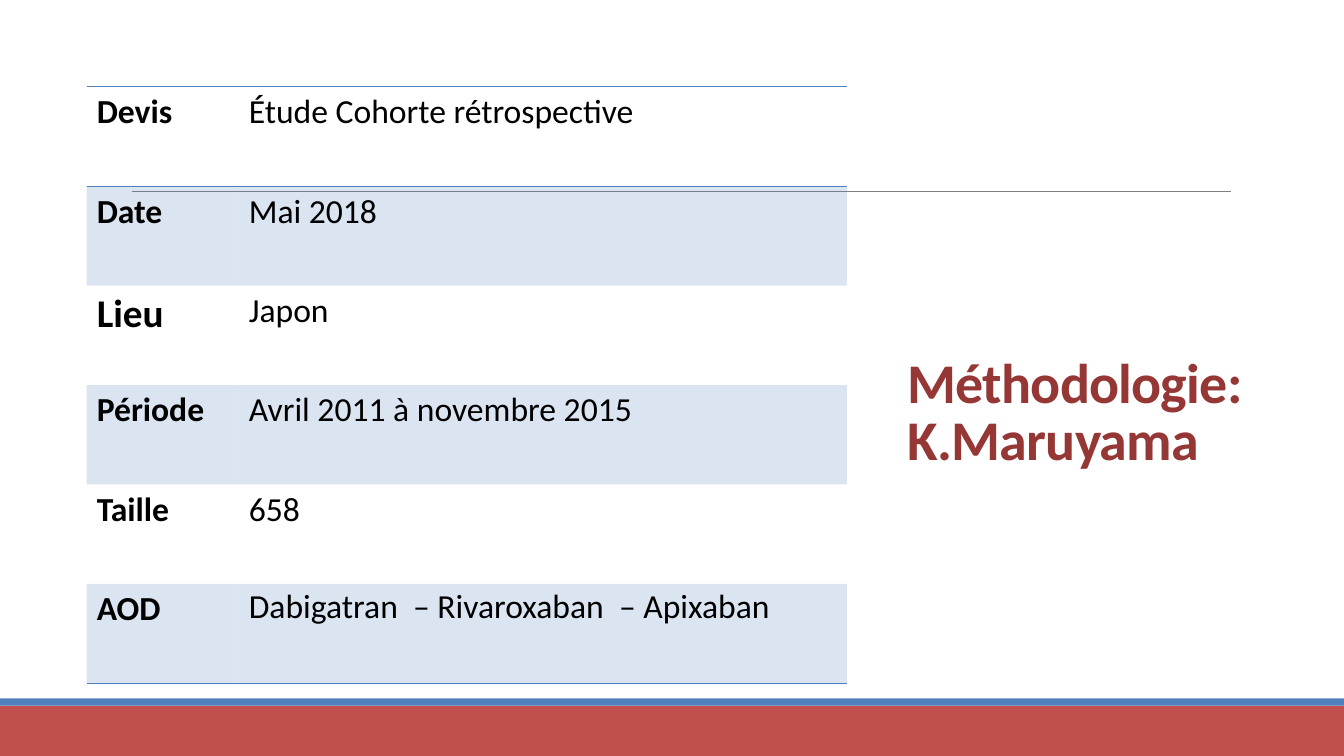
from dataclasses import dataclass

from lxml.etree import SubElement
from pptx import Presentation
from pptx.dml.color import RGBColor
from pptx.enum.shapes import MSO_CONNECTOR, MSO_SHAPE
from pptx.enum.text import MSO_ANCHOR, MSO_AUTO_SIZE, PP_ALIGN
from pptx.oxml import parse_xml
from pptx.oxml.ns import nsdecls, qn
from pptx.util import Inches, Pt


@dataclass(frozen=True)
class Theme:
    """Colours, font and type sizes of the slide."""
    blue: str = "4F81BD"
    red: str = "C0504D"
    title: str = "953735"
    rule: str = "808080"
    text: str = "000000"
    font: str = "Calibri"
    title_size: int = 40
    body_size: int = 24
    large_size: int = 28
    band_alpha: int = 20


THEME = Theme()
NO_TABLE_STYLE = "{2D5ABB26-0587-4C30-8999-92F81FD0307C}"
STUDY_ROWS = [
    ("Devis", "Étude Cohorte rétrospective"),
    ("Date", "Mai 2018"),
    ("Lieu", "Japon"),
    ("Période", "Avril 2011 à novembre 2015"),
    ("Taille", "658"),
    ("AOD", "Dabigatran  – Rivaroxaban  – Apixaban"),
]


def style_run(run, size, color, bold):
    """Apply the theme font with a size, colour and weight."""
    run.font.name = THEME.font
    run.font.size = Pt(size)
    run.font.bold = bold
    run.font.color.rgb = RGBColor.from_string(color)


def add_bar(slide, left, top, width, height, color):
    """Add a plain filled bar."""
    bar = slide.shapes.add_shape(
        MSO_SHAPE.RECTANGLE, Inches(left), Inches(top), Inches(width), Inches(height))
    bar.shadow.inherit = False
    bar.fill.solid()
    bar.fill.fore_color.rgb = RGBColor.from_string(color)
    bar.line.fill.background()


def add_footer(slide, left, top, width, height):
    """Add the red footer with its blue strip on top."""
    strip = 0.07
    add_bar(slide, left, top + strip, width, height - strip, THEME.red)
    add_bar(slide, left, top, width, strip, THEME.blue)


def add_rule(slide, left, top, width):
    """Add the thin grey horizontal line."""
    rule = slide.shapes.add_connector(
        MSO_CONNECTOR.STRAIGHT, Inches(left), Inches(top), Inches(left + width), Inches(top))
    rule.line.color.rgb = RGBColor.from_string(THEME.rule)
    rule.line.width = Pt(0.5)
    SubElement(rule._element.spPr, qn("a:effectLst"))


def place_title(slide, left, top, width, height, lines):
    """Place the title placeholder and fill it with lines."""
    title = slide.shapes.title
    title.left, title.top = Inches(left), Inches(top)
    title.width, title.height = Inches(width), Inches(height)
    frame = title.text_frame
    frame.word_wrap = True
    frame.auto_size = MSO_AUTO_SIZE.NONE
    frame.vertical_anchor = MSO_ANCHOR.BOTTOM
    paragraph = frame.paragraphs[0]
    paragraph.text = lines[0]
    for line in lines[1:]:
        paragraph.add_line_break()
        paragraph.add_run().text = line
    paragraph.alignment = PP_ALIGN.LEFT
    paragraph.line_spacing = 0.85
    for run in paragraph.runs:
        style_run(run, THEME.title_size, THEME.title, True)
        run.font._element.set("spc", "-50")


def set_borders(cell, sides):
    """Draw blue borders on the given sides, listed in T, B order."""
    properties = cell._tc.get_or_add_tcPr()
    for position, side in enumerate(sides):
        properties.insert(position, parse_xml(
            f'<a:ln{side} {nsdecls("a")} w="12700"><a:solidFill>'
            f'<a:srgbClr val="{THEME.blue}"/></a:solidFill></a:ln{side}>'))


def fill_band(cell, banded):
    """Give a banded cell the translucent blue and clear the others."""
    if not banded:
        cell.fill.background()
        return
    cell.fill.solid()
    cell.fill.fore_color.rgb = RGBColor.from_string(THEME.blue)
    color = cell._tc.tcPr.find(f".//{qn('a:solidFill')}/{qn('a:srgbClr')}")
    SubElement(color, qn("a:alpha")).set("val", str(THEME.band_alpha * 1000))


def add_study_table(slide, left, top, width, height, rows):
    """Add the table of study features, labels on the left."""
    frame = slide.shapes.add_table(
        len(rows), 2, Inches(left), Inches(top), Inches(width), Inches(height))
    table = frame.table
    table.first_row = table.horz_banding = False
    table._tbl.tblPr.find(qn("a:tableStyleId")).text = NO_TABLE_STYLE
    table.columns[0].width = Inches(width * 0.2)
    table.columns[1].width = Inches(width * 0.8)
    borders = {0: "TB", len(rows) - 1: "B"}
    for row_index, texts in enumerate(rows):
        table.rows[row_index].height = Inches(height / len(rows))
        for column_index, text in enumerate(texts):
            cell = table.cell(row_index, column_index)
            cell.text_frame.text = text
            is_label = column_index == 0
            size = THEME.large_size if text == "Lieu" else THEME.body_size
            style_run(cell.text_frame.paragraphs[0].runs[0], size, THEME.text, is_label)
            fill_band(cell, row_index % 2 == 1)
            set_borders(cell, borders.get(row_index, ""))
    drugs = table.cell(len(rows) - 1, 1)
    drugs.margin_top = drugs.margin_bottom = 0
    drugs.text_frame.paragraphs[0].line_spacing = 1.07
    drugs.text_frame.paragraphs[0].space_after = Pt(8)


def add_methodology_slide(presentation):
    """Build the methodology slide."""
    slide = presentation.slides.add_slide(presentation.slide_layouts[5])
    add_footer(slide, 0, 6.93, 13.33, 0.57)
    add_rule(slide, 1.31, 1.9, 10.9)
    place_title(slide, 8.9, 0.7, 3.72, 4.03, ["Méthodologie:", "K.Maruyama"])
    add_study_table(slide, 0.86, 0.86, 7.54, 5.92, STUDY_ROWS)


def main():
    """Create the presentation and save it."""
    presentation = Presentation()
    presentation.slide_width = Inches(13.33)
    presentation.slide_height = Inches(7.5)
    add_methodology_slide(presentation)
    presentation.save("out.pptx")


if __name__ == "__main__":
    main()
